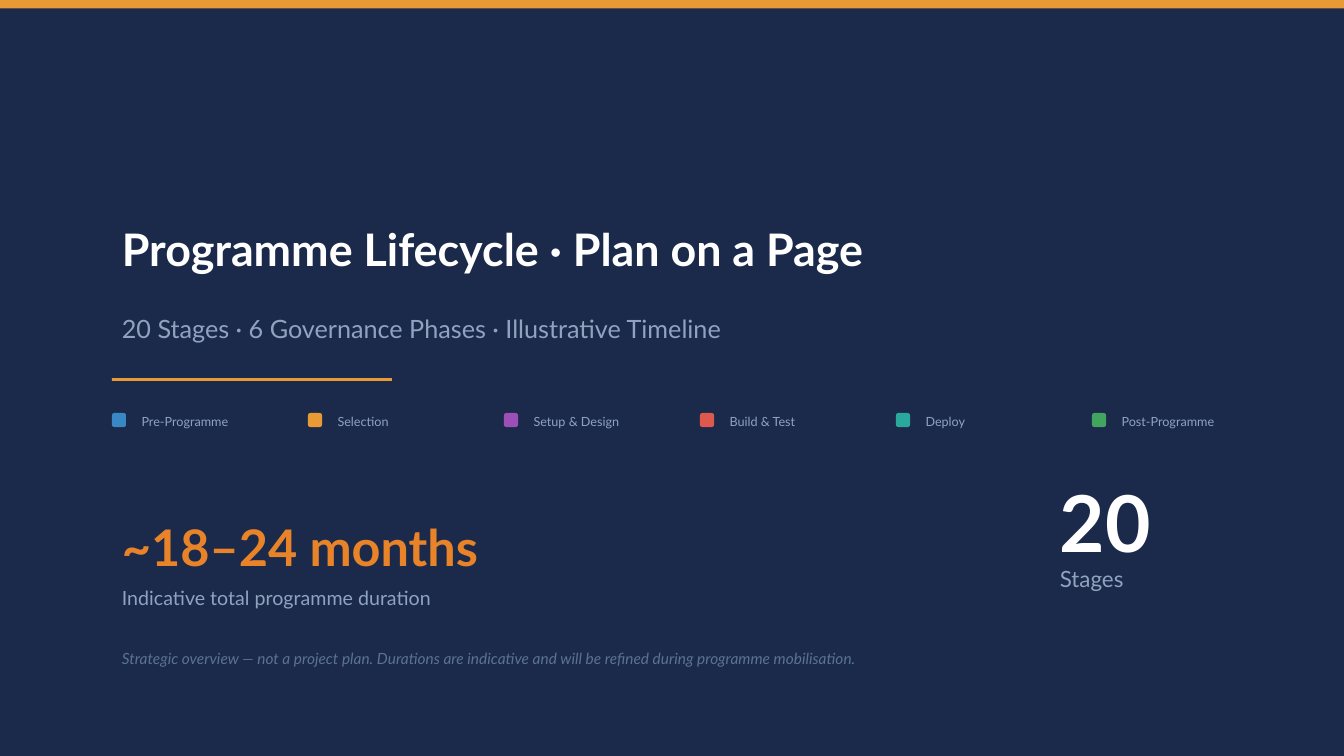
from pptx import Presentation
from pptx.dml.color import RGBColor
from pptx.enum.shapes import MSO_SHAPE
from pptx.enum.text import MSO_ANCHOR, MSO_AUTO_SIZE
from pptx.util import Pt

RECTANGLE = MSO_SHAPE.RECTANGLE
ROUNDED = MSO_SHAPE.ROUNDED_RECTANGLE
TOP = MSO_ANCHOR.TOP
GROW = MSO_AUTO_SIZE.SHAPE_TO_FIT_TEXT

FONT = "Lato"
COLOURS = {
    "navy": "1B2A4A",
    "white": "FFFFFF",
    "mist": "8FA3BF",
    "slate": "5A7394",
    "amber": "E89A35",
    "orange": "E8832A",
    "blue": "3A87C6",
    "purple": "9C4FB6",
    "red": "DD594D",
    "teal": "2BA89D",
    "green": "42A55F",
}

SLIDE_WIDTH, SLIDE_HEIGHT = 960, 540
MARGIN = 80
CONTENT_WIDTH = SLIDE_WIDTH - 2 * MARGIN
COUNT_LEFT = 750

PHASES = [
    ("Pre-Programme", "blue"),
    ("Selection", "amber"),
    ("Setup & Design", "purple"),
    ("Build & Test", "red"),
    ("Deploy", "teal"),
    ("Post-Programme", "green"),
]
PHASE_TOP = 295
PHASE_STEP = 140
SWATCH = 10
LABEL_OFFSET = 14

STATEMENTS = [
    ("Programme Lifecycle · Plan on a Page",
     (MARGIN, 155, CONTENT_WIDTH, 60), 32, "white", True, False),
    ("20 Stages · 6 Governance Phases · Illustrative Timeline",
     (MARGIN, 220, CONTENT_WIDTH, 40), 18, "mist", False, False),
    ("Strategic overview — not a project plan. Durations are indicative "
     "and will be refined during programme mobilisation.",
     (MARGIN, 460, CONTENT_WIDTH, 40), 11, "slate", False, True),
    ("~18–24 months", (MARGIN, 365, 433, 50), 36, "orange", True, False),
    ("Indicative total programme duration",
     (MARGIN, 415, 300, 25), 14, "mist", False, False),
    ("20", (COUNT_LEFT, 335, 120, 60), 56, "white", True, False),
    ("Stages", (COUNT_LEFT, 400, 120, 25), 16, "mist", False, False),
]


def colour(name):
    return RGBColor.from_string(COLOURS[name])


def add_block(slide, preset, box, fill):
    block = slide.shapes.add_shape(preset, *map(Pt, box))
    block.shadow.inherit = False
    block.fill.solid()
    block.fill.fore_color.rgb = colour(fill)
    block.line.fill.background()


def add_text(slide, words, box, size, ink, bold=False, italic=False):
    frame = slide.shapes.add_textbox(*map(Pt, box)).text_frame
    frame.word_wrap = True
    frame.auto_size = GROW
    frame.vertical_anchor = TOP
    paragraph = frame.paragraphs[0]
    paragraph.text = words
    font = paragraph.font
    font.name = FONT
    font.size = Pt(size)
    font.bold = bold
    font.italic = italic
    font.color.rgb = colour(ink)


def main():
    deck = Presentation()
    deck.slide_width = Pt(SLIDE_WIDTH)
    deck.slide_height = Pt(SLIDE_HEIGHT)
    slide = deck.slides.add_slide(deck.slide_layouts[6])
    slide.background.fill.solid()
    slide.background.fill.fore_color.rgb = colour("navy")

    add_block(slide, RECTANGLE, (0, 0, SLIDE_WIDTH, 6), "amber")
    add_block(slide, RECTANGLE, (MARGIN, 270, 200, 2), "amber")

    for index, (phase, fill) in enumerate(PHASES):
        left = MARGIN + index * PHASE_STEP
        add_block(slide, ROUNDED, (left, PHASE_TOP, SWATCH, SWATCH), fill)
        label_box = (left + LABEL_OFFSET, PHASE_TOP - 3, 120, 18)
        add_text(slide, phase, label_box, 9, "mist")

    for statement in STATEMENTS:
        add_text(slide, *statement)

    deck.save("out.pptx")


if __name__ == "__main__":
    main()
